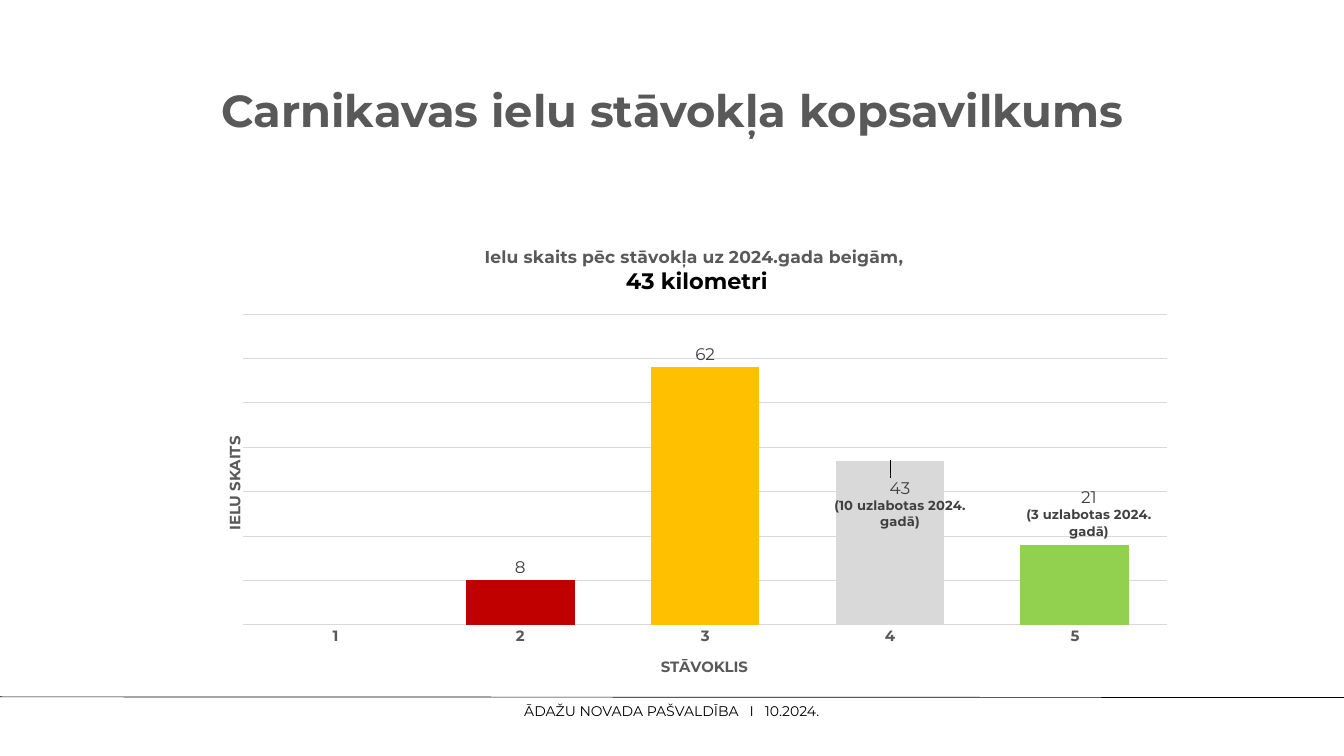
import lxml.etree
import pptx
import pptx.chart.data
import pptx.dml.color
import pptx.enum.chart
import pptx.enum.shapes
import pptx.enum.text
import pptx.oxml
import pptx.oxml.ns
import pptx.util
from pptx.util import Inches

FONT = "Montserrat"
GREY = "595959"


def style(font, size, color, bold=False):
    font.name = FONT
    font.size = pptx.util.Pt(size)
    font.bold = bold
    font.color.rgb = pptx.dml.color.RGBColor.from_string(color)


def place(element, index, **settings):
    """Give a chart part a manual layout, as fractions of the chart."""
    qn = pptx.oxml.ns.qn
    for old in element.findall(qn("c:layout")):
        element.remove(old)
    layout = lxml.etree.Element(qn("c:layout"))
    manual = lxml.etree.SubElement(layout, qn("c:manualLayout"))
    for name, value in settings.items():
        lxml.etree.SubElement(manual, qn("c:" + name)).set("val", str(value))
    element.insert(index, layout)


deck = pptx.Presentation()
deck.slide_width = Inches(20)
deck.slide_height = Inches(11.25)
page = deck.slides.add_slide(deck.slide_layouts[6])

# Heading and footer
texts = [
    ("Carnikavas ielu stāvokļa kopsavilkums", (1.38, 0.6, 17.25, 2.17), 48, GREY, True, 0.9),
    ("ĀDAŽU NOVADA PAŠVALDĪBA   I   10.2024.", (0.1, 10.46, 19.8, 0.25), 15, "000000", False,
     pptx.util.Pt(18)),
]
for text, place_on_page, size, color, bold, spacing in texts:
    box = page.shapes.add_textbox(*[Inches(length) for length in place_on_page])
    frame = box.text_frame
    frame.word_wrap = True
    frame.margin_left = frame.margin_right = frame.margin_top = frame.margin_bottom = 0
    frame.vertical_anchor = pptx.enum.text.MSO_ANCHOR.MIDDLE
    frame.text = text
    para = frame.paragraphs[0]
    para.alignment = pptx.enum.text.PP_ALIGN.CENTER
    para.line_spacing = spacing
    style(para.runs[0].font, size, color, bold)

# Footer rule
rule = page.shapes.add_connector(
    pptx.enum.shapes.MSO_CONNECTOR.STRAIGHT,
    Inches(-0.01), Inches(10.37), Inches(20.01), Inches(10.38))
rule.line.width = pptx.util.Pt(0.75)
rule.line.color.rgb = pptx.dml.color.RGBColor.from_string("000000")
lxml.etree.SubElement(rule._element.spPr, pptx.oxml.ns.qn("a:effectLst"))

# Column chart of streets by condition
data = pptx.chart.data.CategoryChartData()
data.categories = ["1", "2", "3", "4", "5"]
data.add_series("Series 1", [None, 10, 58, 37, 18])
chart = page.shapes.add_chart(
    pptx.enum.chart.XL_CHART_TYPE.COLUMN_CLUSTERED,
    Inches(2.75), Inches(3.54), Inches(14.92), Inches(6.75), data).chart
chart.has_legend = False
style(chart.font, 10, "000000")
place(chart._chartSpace.chart.plotArea, 0, layoutTarget="inner", xMode="edge", yMode="edge",
      x=0.058, y=0.168, w=0.922, h=0.685)

# Chart title
title = chart.chart_title
title.include_in_layout = False
title.text_frame.text = "Ielu skaits pēc stāvokļa uz 2024.gada beigām, \n43 kilometri"
for para, size, color in zip(title.text_frame.paragraphs, (18.4, 24), (GREY, "000000")):
    style(para.runs[0].font, size, color, True)
place(title._element, 1, xMode="edge", yMode="edge", x=0.297, y=0.013)

# Axes
category_axis, value_axis = chart.category_axis, chart.value_axis
for axis, text, x, y in [(category_axis, "STĀVOKLIS", 0.472, 0.917),
                         (value_axis, "IELU SKAITS", 0.037, 0.432)]:
    axis_title = axis.axis_title
    axis_title.text_frame.text = text
    style(axis_title.text_frame.paragraphs[0].runs[0].font, 16, GREY, True)
    place(axis_title._element, 1, xMode="edge", yMode="edge", x=x, y=y)
    axis.major_tick_mark = pptx.enum.chart.XL_TICK_MARK.NONE
value_axis.axis_title.text_frame._txBody.bodyPr.set("rot", "-5400000")
style(category_axis.tick_labels.font, 16, GREY, True)
category_axis.format.line.fill.background()
value_axis.visible = False
value_axis.minimum_scale, value_axis.maximum_scale, value_axis.major_unit = 0, 70, 10
grid = value_axis.major_gridlines.format.line
grid.width = pptx.util.Pt(0.75)
grid.color.rgb = pptx.dml.color.RGBColor.from_string("D9D9D9")

# Columns with their own colours and labels
plot = chart.plots[0]
plot.gap_width = 70
plot.vary_by_categories = False
series = plot.series[0]
series.format.fill.solid()
series.format.fill.fore_color.rgb = pptx.dml.color.RGBColor.from_string("4472C4")
labels = series.data_labels
labels.show_value = True
labels.position = pptx.enum.chart.XL_LABEL_POSITION.OUTSIDE_END
style(labels.font, 18, "404040", True)
columns = [
    ("C00000", "8", None),
    ("FFC000", "62", None),
    ("D9D9D9", "43\n(10 uzlabotas 2024. gadā)", (0.01, 0.16)),
    ("92D050", "21\n(3 uzlabotas 2024. gadā)", (0.014, -0.006)),
]
for index, (color, text, shift) in enumerate(columns, start=1):
    point = series.points[index]
    point.format.fill.solid()
    point.format.fill.fore_color.rgb = pptx.dml.color.RGBColor.from_string(color)
    label = point.data_label
    label.text_frame.text = text
    for para, size, bold in zip(label.text_frame.paragraphs, (18, 14), (False, True)):
        style(para.runs[0].font, size, "404040", bold)
    label.position = pptx.enum.chart.XL_LABEL_POSITION.OUTSIDE_END
    if shift:
        place(label._get_or_add_dLbl(), 1, x=shift[0], y=shift[1])

# No leader lines to the shifted labels
labels._element.append(pptx.oxml.parse_xml(
    '<c:extLst xmlns:c="http://schemas.openxmlformats.org/drawingml/2006/chart">'
    '<c:ext uri="{CE6537A1-D6FC-4f65-9D91-7224C49458BB}" '
    'xmlns:c15="http://schemas.microsoft.com/office/drawing/2012/chart">'
    '<c15:showLeaderLines val="0"/></c:ext></c:extLst>'))

deck.save("out.pptx")
